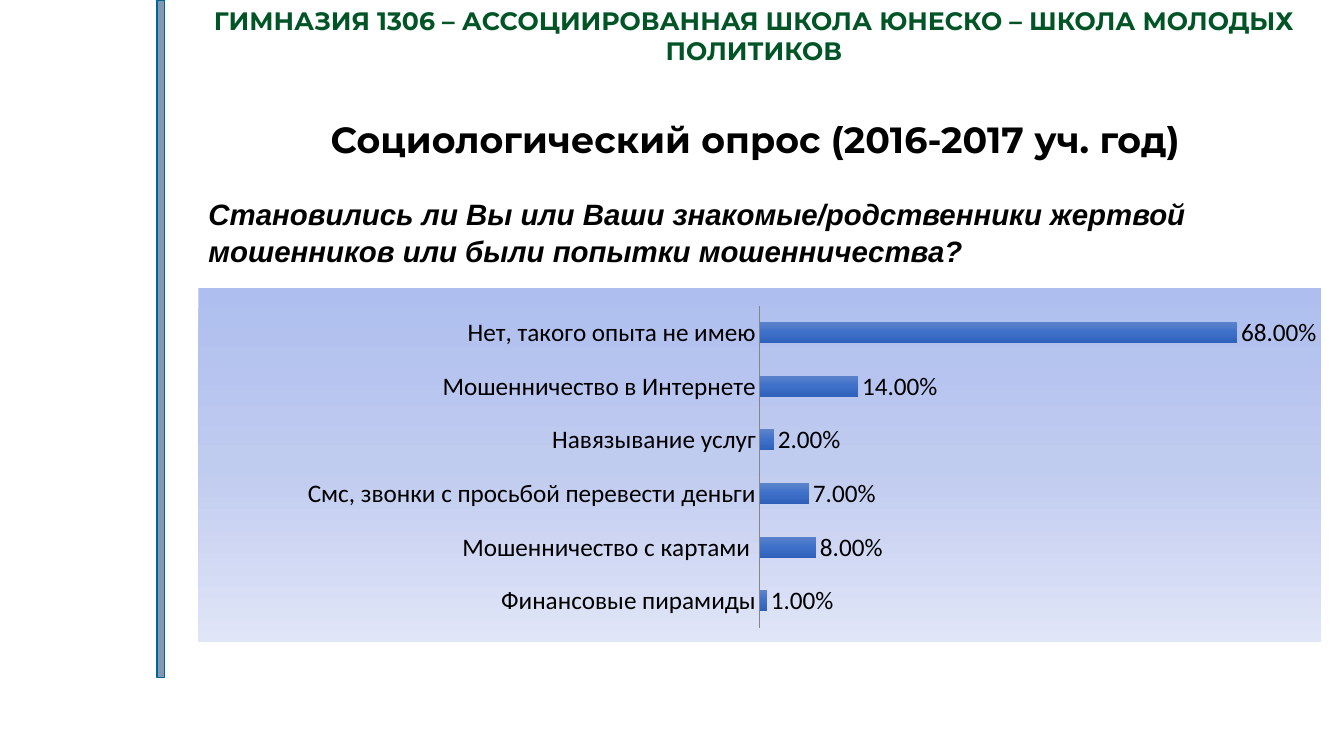
from lxml import etree
from pptx import Presentation, util as u
from pptx.chart import data
from pptx.dml.color import RGBColor
from pptx.enum import chart as ch, shapes, text
from pptx.oxml import parse_xml
from pptx.oxml.ns import nsdecls, qn

BLACK = RGBColor(0x00, 0x00, 0x00)
GREEN = RGBColor(0x00, 0x54, 0x26)
SLATE = RGBColor(0x84, 0x97, 0xB0)
BLUE_EDGE = RGBColor(0x00, 0x66, 0x99)
AXIS_GREY = RGBColor(0x86, 0x86, 0x86)
PANEL_STOPS = [(0, RGBColor(0xAE, 0xBE, 0xEF)), (50, RGBColor(0xC0, 0xCB, 0xF0)),
               (100, RGBColor(0xE0, 0xE5, 0xF7))]
BAR_STOPS = [(0, RGBColor(0x5B, 0x83, 0xCB)), (50, RGBColor(0x3E, 0x70, 0xCA)),
             (100, RGBColor(0x2F, 0x61, 0xBA))]

ANSWERS = [
    ("Финансовые пирамиды", 0.01),
    ("Мошенничество с картами ", 0.08),
    ("Смс, звонки с просьбой перевести деньги", 0.07),
    ("Навязывание услуг", 0.02),
    ("Мошенничество в Интернете", 0.14),
    ("Нет, такого опыта не имею", 0.68),
]


def set_all(target, values):
    for name, value in values.items():
        setattr(target, name, value)


def gradient(stops):
    """Vertical gradient fill element."""
    gs = "".join(f'<a:gs pos="{pos * 1000}"><a:srgbClr val="{color}"/></a:gs>'
                 for pos, color in stops)
    return parse_xml(f'<a:gradFill {nsdecls("a")}><a:gsLst>{gs}</a:gsLst>'
                     '<a:lin ang="5400000" scaled="0"/></a:gradFill>')


class SurveySlide:
    HEADER = {"name": "Montserrat", "size": u.Pt(18), "bold": True}
    TITLE = {"name": "Montserrat", "size": u.Pt(26), "bold": True}
    QUESTION = {"name": "Arial", "size": u.Pt(21), "bold": True, "italic": True}
    CHART = {"name": "Calibri", "size": u.Pt(18), "bold": False}

    def __init__(self, prs):
        self.s = prs.slides.add_slide(prs.slide_layouts[1])

    def place(self, sp, box):
        set_all(sp, dict(zip(("left", "top", "width", "height"), map(u.Cm, box))))

    def fill_text(self, sp, lines, font, color, para, gap=0):
        tf = sp.text_frame
        set_all(tf, {"word_wrap": True, "auto_size": text.MSO_AUTO_SIZE.NONE,
                     "vertical_anchor": text.MSO_ANCHOR.TOP})
        for i, line in enumerate(lines):
            p = tf.add_paragraph() if i else tf.paragraphs[0]
            pPr = p._p.get_or_add_pPr()
            pPr.set("marL", "0")
            pPr.set("indent", "0")
            etree.SubElement(pPr, qn("a:buNone"))
            set_all(p, {"space_before": u.Pt(gap if i else 0), **para})
            r = p.add_run()
            r.text = line
            set_all(r.font, font)
            r.font.color.rgb = color

    def header(self, line, box):
        sp = self.s.shapes.add_textbox(*map(u.Cm, box))
        self.fill_text(sp, [line], self.HEADER, GREEN, {"alignment": text.PP_ALIGN.CENTER})

    def stripe(self, box):
        sp = self.s.shapes.add_shape(shapes.MSO_SHAPE.RECTANGLE, *map(u.Cm, box))
        sp.shadow.inherit = False
        sp.fill.solid()
        sp.fill.fore_color.rgb = SLATE
        sp.line.color.rgb = BLUE_EDGE
        sp.line.width = u.Pt(1)

    def title(self, line, box):
        sp = self.s.shapes.title
        self.place(sp, box)
        self.fill_text(sp, [line], self.TITLE, BLACK,
                       {"alignment": text.PP_ALIGN.CENTER, "line_spacing": 0.9})

    def question(self, lines, box):
        sp = self.s.placeholders[1]
        self.place(sp, box)
        self.fill_text(sp, lines, self.QUESTION, BLACK,
                       {"alignment": text.PP_ALIGN.LEFT, "line_spacing": u.Pt(20)}, gap=6)

    def bar_chart(self, answers, box):
        cd = data.CategoryChartData(number_format="0.00%")
        cd.categories = [name for name, _ in answers]
        cd.add_series("Series 1", [share for _, share in answers])
        chart = self.s.shapes.add_chart(
            ch.XL_CHART_TYPE.BAR_CLUSTERED, *map(u.Cm, box), cd).chart
        set_all(chart, {"has_legend": False, "has_title": False})
        set_all(chart.font, self.CHART)
        chart.font.color.rgb = BLACK

        # Axes
        set_all(chart.category_axis, {"major_tick_mark": ch.XL_TICK_MARK.NONE,
                                      "has_major_gridlines": False})
        chart.category_axis.format.line.color.rgb = AXIS_GREY
        set_all(chart.value_axis, {"visible": False, "has_major_gridlines": False,
                                   "minimum_scale": 0, "maximum_scale": 0.8})

        # Bars and labels
        plot = chart.plots[0]
        set_all(plot, {"gap_width": 155, "overlap": -25, "vary_by_categories": False,
                       "has_data_labels": True})
        set_all(plot.data_labels, {
            "show_value": True, "number_format": "0.00%", "number_format_is_linked": False,
            "position": ch.XL_LABEL_POSITION.OUTSIDE_END})
        bars = plot.series[0]
        bars.invert_if_negative = False
        bars.format.fill.background()
        spPr = bars._element.find(qn("c:spPr"))
        spPr.replace(spPr.find(qn("a:noFill")), gradient(BAR_STOPS))

        # Panel fill and plot position
        root = chart._chartSpace
        panel = parse_xml(f'<c:spPr {nsdecls("c", "a")}><a:ln><a:noFill/></a:ln></c:spPr>')
        panel.insert(0, gradient(PANEL_STOPS))
        root.find(qn("c:chart")).addnext(panel)
        area = root.find(".//" + qn("c:plotArea"))
        for old in area.findall(qn("c:layout")):
            area.remove(old)
        rules = [("layoutTarget", "inner"), ("xMode", "edge"), ("yMode", "edge"),
                 ("x", 0.5), ("y", 0.05), ("w", 0.5), ("h", 0.91)]
        body = "".join(f'<c:{tag} val="{val}"/>' for tag, val in rules)
        area.insert(0, parse_xml(f'<c:layout {nsdecls("c")}><c:manualLayout>{body}'
                                 '</c:manualLayout></c:layout>'))


def main():
    prs = Presentation()
    prs.slide_width, prs.slide_height = u.Cm(33.87), u.Cm(19.05)
    slide = SurveySlide(prs)

    # School header and side stripe
    slide.header("ГИМНАЗИЯ 1306 – АССОЦИИРОВАННАЯ ШКОЛА ЮНЕСКО – ШКОЛА МОЛОДЫХ ПОЛИТИКОВ",
                 (4.14, 0, 29.72, 1.8))
    slide.stripe((3.96, 0, 0.18, 17.07))

    # Survey title, question and answers
    slide.title("Социологический опрос (2016-2017 уч. год)", (4.22, 2.95, 29.65, 1.47))
    slide.question(["Становились ли Вы или Ваши знакомые/родственники жертвой",
                    "мошенников или были попытки мошенничества?"], (5, 5, 28.3, 2.1))
    slide.bar_chart(ANSWERS, (5, 7.26, 28.3, 8.92))
    prs.save("out.pptx")


if __name__ == "__main__":
    main()
